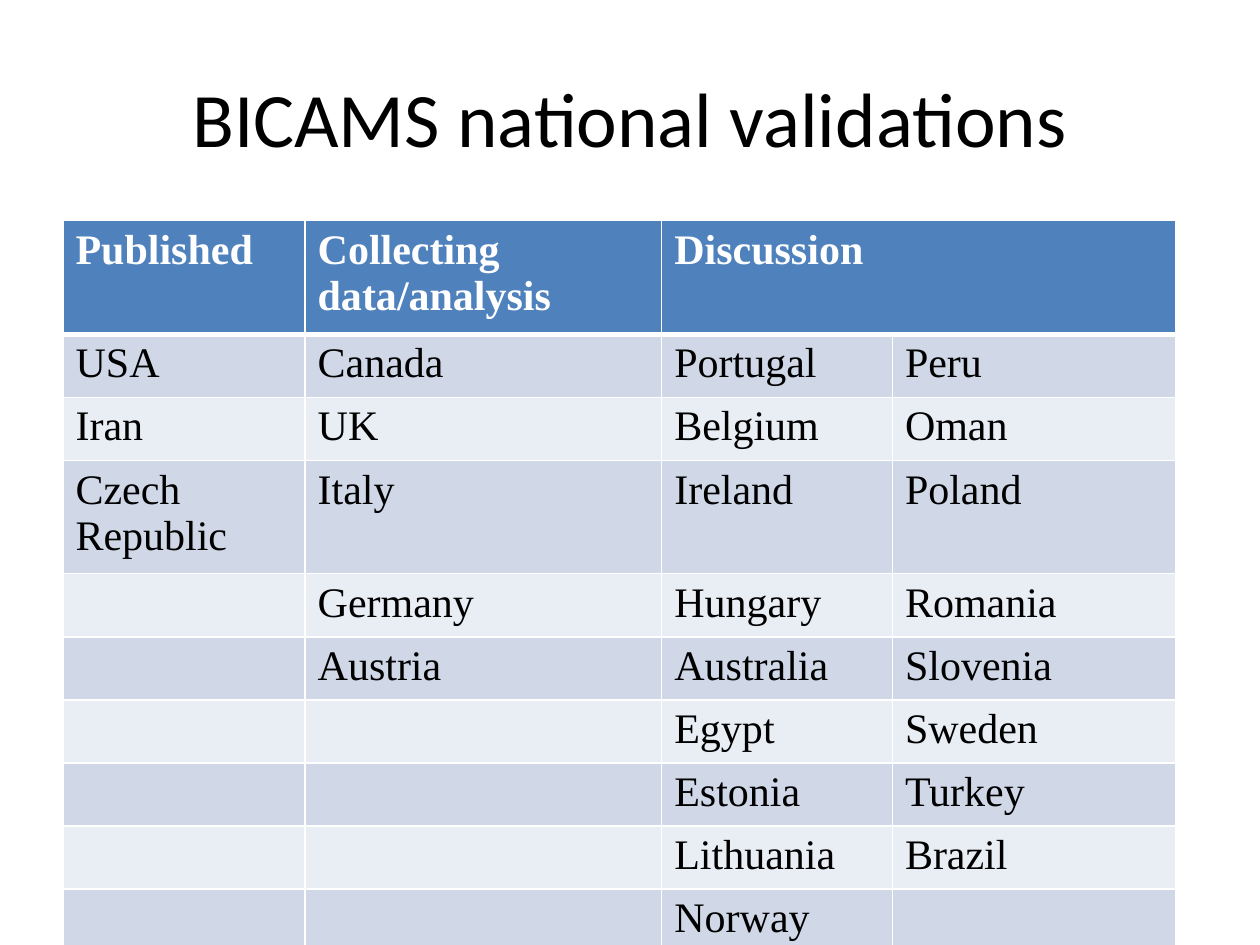
from lxml import etree
from pptx import Presentation
from pptx.dml.color import RGBColor
from pptx.enum.text import MSO_ANCHOR, PP_ALIGN
from pptx.oxml.ns import qn
from pptx.util import Cm, Pt

CENTER, LEFT = PP_ALIGN.CENTER, PP_ALIGN.LEFT
MIDDLE = MSO_ANCHOR.MIDDLE
BLACK, WHITE = "000000", "FFFFFF"
HEADER_FILL = "4F81BD"
BAND_FILLS = ("D0D8E8", "E9EDF4")

HEADERS = ("Published", "Collecting data/analysis", "Discussion")
STAGES = (
    ("USA", "Iran", "Czech Republic"),
    ("Canada", "UK", "Italy", "Germany", "Austria"),
    ("Portugal", "Belgium", "Ireland", "Hungary", "Australia", "Egypt",
     "Estonia", "Lithuania", "Norway"),
    ("Peru", "Oman", "Poland", "Romania", "Slovenia", "Sweden", "Turkey", "Brazil"),
)
COL_WIDTHS = (4.88, 7.19, 4.65, 5.72)
ROW_HEIGHT = 1.03


def rgb(color):
    return RGBColor.from_string(color)


def set_text(tf, text, size=24, font="Times New Roman", color=BLACK, bold=False,
             align=LEFT):
    p = tf.paragraphs[0]
    p.alignment = align
    r = p.add_run()
    r.text = text
    r.font.size = Pt(size)
    r.font.name = font
    r.font.bold = bold
    r.font.color.rgb = rgb(color)


def set_empty(tf, size=24):
    """Give an empty cell the text size that decides its row's height."""
    end = etree.SubElement(tf.paragraphs[0]._p, qn("a:endParaRPr"))
    end.set("sz", str(size * 100))


def set_borders(cell, bottom=1):
    tc_pr = cell._tc.get_or_add_tcPr()
    sides = (("a:lnL", 1), ("a:lnR", 1), ("a:lnT", 1), ("a:lnB", bottom))
    for i, (tag, width) in enumerate(sides):
        ln = etree.Element(qn(tag), w=str(Pt(width)))
        fill = etree.SubElement(ln, qn("a:solidFill"))
        etree.SubElement(fill, qn("a:srgbClr"), val=WHITE)
        tc_pr.insert(i, ln)


def style_cell(cell, fill, bottom=1):
    cell.fill.solid()
    cell.fill.fore_color.rgb = rgb(fill)
    set_borders(cell, bottom)


def add_title(s, x, y, w, h):
    tf = s.shapes.add_textbox(Cm(x), Cm(y), Cm(w), Cm(h)).text_frame
    tf.word_wrap = True
    tf.vertical_anchor = MIDDLE
    set_text(tf, "BICAMS national validations", size=44, font="Calibri", align=CENTER)


def add_validation_table(s, x, y):
    n_rows = 1 + max(len(countries) for countries in STAGES)
    table = s.shapes.add_table(n_rows, len(STAGES), Cm(x), Cm(y),
                               Cm(sum(COL_WIDTHS)), Cm(ROW_HEIGHT * n_rows)).table
    for col, width in zip(table.columns, COL_WIDTHS):
        col.width = Cm(width)
    for row in table.rows:
        row.height = Cm(ROW_HEIGHT)

    for j, countries in enumerate(STAGES):
        style_cell(table.cell(0, j), HEADER_FILL, bottom=3)
        for i in range(1, n_rows):
            cell = table.cell(i, j)
            style_cell(cell, BAND_FILLS[(i - 1) % 2])
            if i <= len(countries):
                set_text(cell.text_frame, countries[i - 1])
            else:
                set_empty(cell.text_frame)

    table.cell(0, 2).merge(table.cell(0, 3))
    for j, header in enumerate(HEADERS):
        set_text(table.cell(0, j).text_frame, header, color=WHITE, bold=True)


def main():
    prs = Presentation()
    prs.slide_width, prs.slide_height = Cm(25.4), Cm(19.05)
    s = prs.slides.add_slide(prs.slide_layouts[6])
    add_title(s, 1.27, 0.76, 22.86, 3.18)
    add_validation_table(s, 1.27, 4.45)
    prs.save("out.pptx")


if __name__ == "__main__":
    main()
